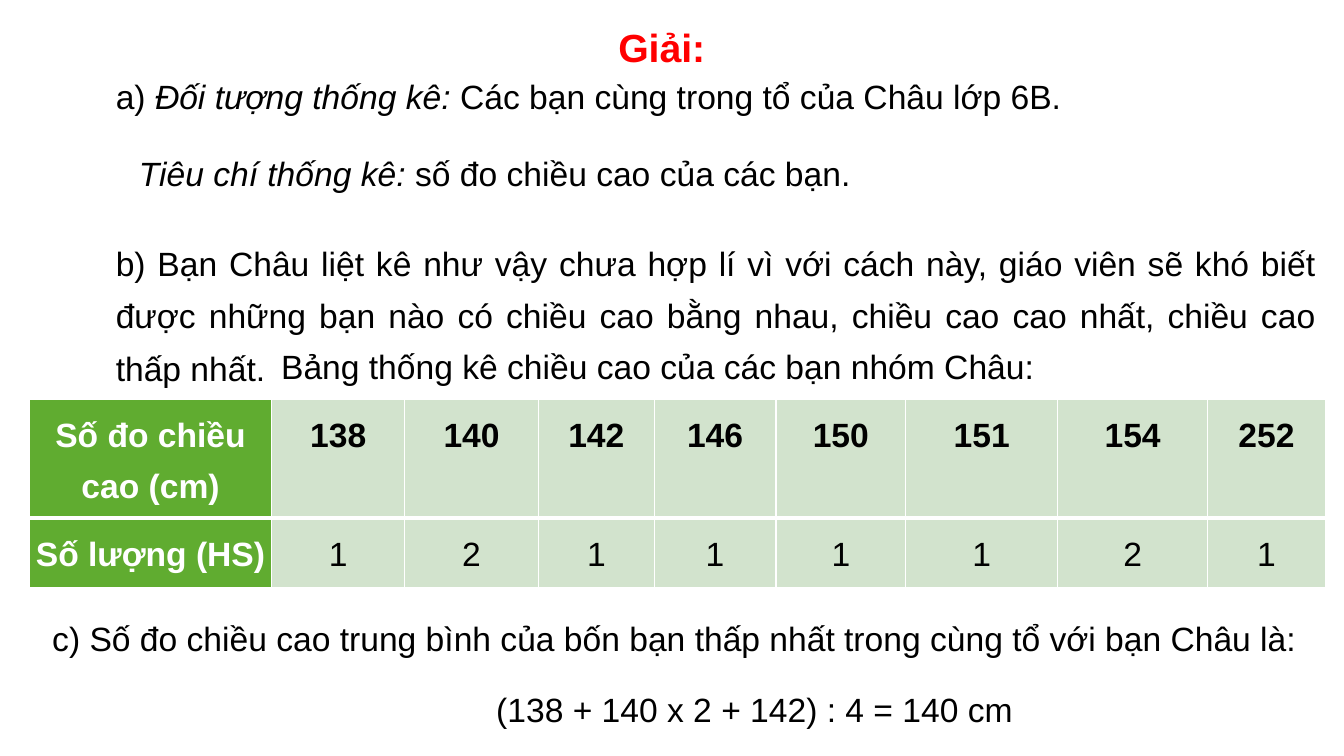
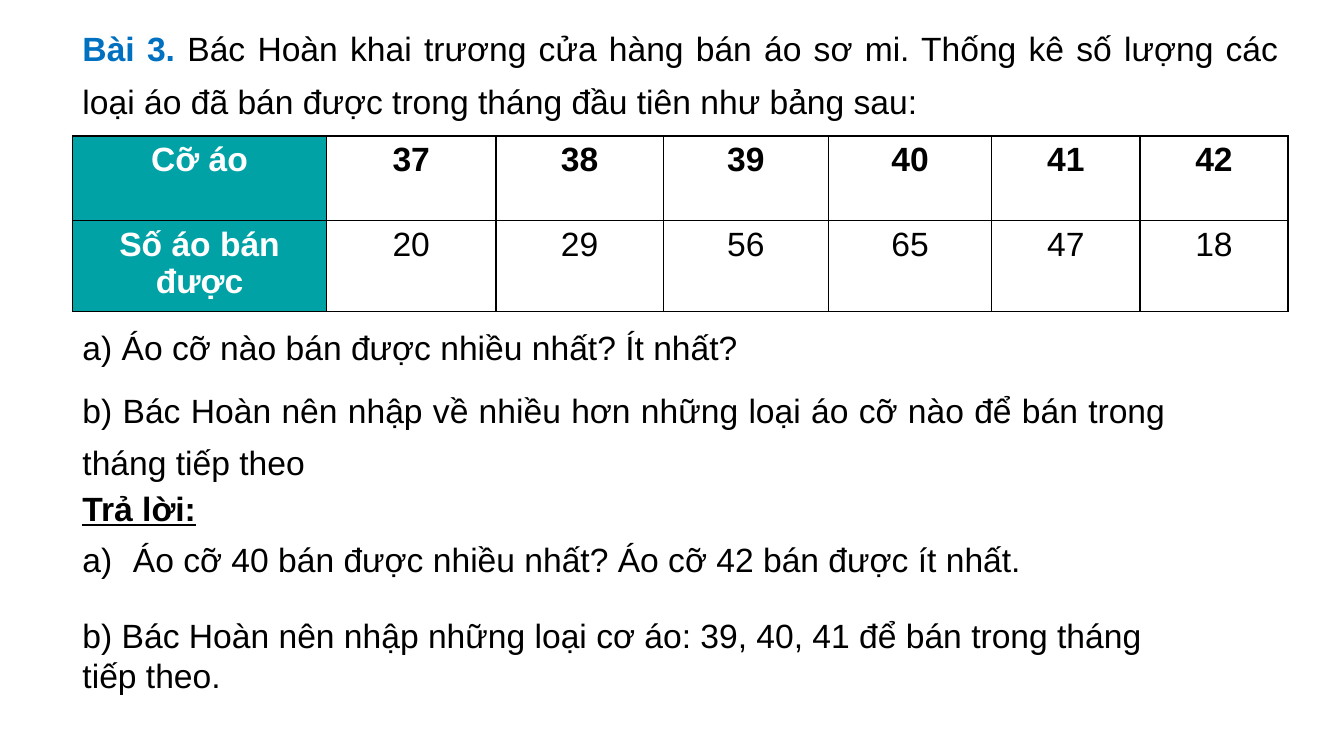
from dataclasses import dataclass

from lxml import etree
from pptx import Presentation
from pptx import util as u
from pptx.dml.color import RGBColor
from pptx.enum import text
from pptx.oxml import ns


@dataclass(frozen=True)
class Theme:
    font: str = "Arial"
    title_size: int = 28
    body_size: int = 24
    black: str = "000000"
    white: str = "FFFFFF"
    red: str = "FF0000"
    blue: str = "0070C0"
    green: str = "60AC30"
    pale_green: str = "D2E3CD"
    teal: str = "00A2A6"


theme = Theme()
CENTER, JUSTIFY = text.PP_ALIGN.CENTER, text.PP_ALIGN.JUSTIFY
BOLD, ITALIC = {"bold": True}, {"italic": True}
OPEN = {"alignment": JUSTIFY, "line_spacing": 1.3}
ROOMY = {"line_spacing": 1.35, "space_after": u.Pt(6)}
TITLE = {"bold": True, "size": u.Pt(theme.title_size), "color": theme.red}

presentation = Presentation()
presentation.slide_width, presentation.slide_height = u.Inches(13.33), u.Inches(7.5)


def area(left, top, width, height):
    """Turn percentages of the slide into lengths."""
    across, down = presentation.slide_width / 100, presentation.slide_height / 100
    return [u.Emu(round(share * unit)) for share, unit in
            ((left, across), (top, down), (width, across), (height, down))]


def write(paragraph, runs, layout):
    """Fill a paragraph with (words, font format) runs; indents are in inches."""
    layout = dict(layout)
    properties = paragraph._p.get_or_add_pPr()
    for name in ("marL", "indent"):
        if name in layout:
            properties.set(name, str(u.Inches(layout.pop(name))))
    if "numbering" in layout:
        number = etree.SubElement(properties, ns.qn("a:buAutoNum"))
        number.set("type", layout.pop("numbering"))
    for name, value in layout.items():
        setattr(paragraph, name, value)
    for words, changes in runs:
        run = paragraph.add_run()
        run.text = words
        style = {"name": theme.font, "size": u.Pt(theme.body_size), "bold": False,
                 "color": theme.black, **changes}
        run.font.color.rgb = RGBColor.from_string(style.pop("color"))
        for name, value in style.items():
            setattr(run.font, name, value)


# Each text box: area, wrapping, then paragraphs of (runs, layout)
solution = {
    "boxes": [
        ((38.63, 2.4, 21.23, 7.6), True, [([("Giải:", TITLE)], {"alignment": CENTER})]),
        ((7.88, 9.33, 88.58, 6.67), True, [
            ([("a) ", {}), ("Đối tượng thống kê: ", ITALIC),
              ("Các bạn cùng trong tổ của Châu lớp 6B.", {})], {})]),
        ((9.6, 19.6, 88.58, 6.67), True, [
            ([("Tiêu chí thống kê: ", ITALIC), ("số đo chiều cao của các bạn.", {})], {})]),
        ((7.88, 29.87, 90.75, 21.6), True, [
            ([("b) Bạn Châu liệt kê như vậy chưa hợp lí vì với cách này, giáo viên sẽ khó biết "
               "được những bạn nào có chiều cao bằng nhau, chiều cao cao nhất, chiều cao "
               "thấp nhất.", {})], OPEN)]),
        ((20.18, 43.47, 58.13, 7.6), False, [
            ([("Bảng thống kê chiều cao của các bạn nhóm Châu:", {})], OPEN)]),
        ((3.15, 79.2, 95.55, 18.13), True, [
            ([("c) Số đo chiều cao trung bình của bốn bạn thấp nhất trong cùng tổ với bạn "
               "Châu là:", {})], {**ROOMY, "alignment": JUSTIFY}),
            ([("(138 + 140 x 2 + 142) : 4 = 140 cm", {})],
             {**ROOMY, "alignment": CENTER, "space_before": u.Pt(6), "marL": 1.39, "indent": 0}),
        ]),
    ],
    "table": {
        "area": (2.18, 52.8, 96.45, 23.6),
        "columns": [2.41, 1.32, 1.33, 1.15, 1.21, 1.29, 1.51, 1.49, 1.17],
        "rows": [1.08, 0.69],
        "cells": [["Số đo chiều cao (cm)", 138, 140, 142, 146, 150, 151, 154, 252],
                  ["Số lượng (HS)", 1, 2, 1, 1, 1, 1, 2, 1]],
        "fills": (theme.green, theme.pale_green),
        "line": theme.white, "middle_line": 3,
        "layout": ROOMY, "side_margin": 0.05,
    },
}

exercise = {
    "boxes": [
        ((5.4, 1.47, 90.45, 15.33), True, [
            ([("Bài 3. ", {**BOLD, "color": theme.blue}),
              ("Bác Hoàn khai trương cửa hàng bán áo sơ mi. Thống kê số lượng các loại áo "
               "đã bán được trong tháng đầu tiên như bảng sau:", {})], OPEN)]),
        ((5.4, 42.53, 82.05, 6.67), True, [
            ([("a) Áo cỡ nào bán được nhiều nhất? Ít nhất?", {})], {})]),
        ((5.4, 49.33, 82.05, 15.33), True, [
            ([("b) Bác Hoàn nên nhập về nhiều hơn những loại áo cỡ nào để bán trong "
               "tháng tiếp theo", {})], OPEN)]),
        ((5.4, 63.87, 13.28, 6.67), True, [
            ([("Trả lời:", {**BOLD, "underline": True})], {})]),
        ((5.4, 70.67, 82.05, 6.67), True, [
            ([("Áo cỡ 40 bán được nhiều nhất? Áo cỡ 42 bán được ít nhất.", {})],
             {"marL": 0.5, "indent": -0.5, "numbering": "alphaLcParenR"})]),
        ((5.4, 80.67, 82.05, 17.47), True, [
            ([("b) Bác Hoàn nên nhập những loại cơ áo: 39, 40, 41 để bán trong tháng "
               "tiếp theo.", {})], {})]),
    ],
    "table": {
        "area": (5.4, 18, 90.45, 23.2),
        "columns": [2.52, 1.68, 1.66, 1.64, 1.62, 1.47, 1.47],
        "rows": [0.84, 0.9],
        "cells": [["Cỡ áo", 37, 38, 39, 40, 41, 42],
                  ["Số áo bán được", 20, 29, 56, 65, 47, 18]],
        "fills": (theme.teal, theme.white),
        "line": theme.black, "middle_line": 1,
        "layout": {}, "side_margin": 0.1,
    },
}

for content in (solution, exercise):
    slide = presentation.slides.add_slide(presentation.slide_layouts[6])

    for box_area, wraps, paragraphs in content["boxes"]:
        frame = slide.shapes.add_textbox(*area(*box_area)).text_frame
        frame.word_wrap = wraps
        frame.auto_size = text.MSO_AUTO_SIZE.SHAPE_TO_FIT_TEXT
        for index, (runs, layout) in enumerate(paragraphs):
            paragraph = frame.add_paragraph() if index else frame.paragraphs[0]
            write(paragraph, runs, layout)

    design = content["table"]
    left, top, width, height = area(*design["area"])
    table = slide.shapes.add_table(len(design["rows"]), len(design["columns"]),
                                   left, top, width, height).table
    for column, share in zip(table.columns, design["columns"]):
        column.width = u.Emu(round(width * share / sum(design["columns"])))
    for row, row_height in zip(table.rows, design["rows"]):
        row.height = u.Inches(row_height)

    for row_index, values in enumerate(design["cells"]):
        for column_index, value in enumerate(values):
            cell = table.cell(row_index, column_index)
            is_label = column_index == 0
            cell.margin_left = cell.margin_right = u.Inches(design["side_margin"])
            cell.margin_top = cell.margin_bottom = u.Inches(0.05)
            write(cell.text_frame.paragraphs[0],
                  [(str(value), {"bold": is_label or row_index == 0,
                                 "color": theme.white if is_label else theme.black})],
                  {**design["layout"], "alignment": CENTER})

            properties = cell._tc.get_or_add_tcPr()
            middle_side = "B" if row_index == 0 else "T"
            for side in "LRTB":
                points = design["middle_line"] if side == middle_side else 1
                line = etree.SubElement(properties, ns.qn(f"a:ln{side}"), w=str(u.Pt(points)))
                paint = etree.SubElement(line, ns.qn("a:solidFill"))
                etree.SubElement(paint, ns.qn("a:srgbClr"), val=design["line"])
            cell.fill.solid()
            cell.fill.fore_color.rgb = RGBColor.from_string(design["fills"][not is_label])

presentation.save("out.pptx")
